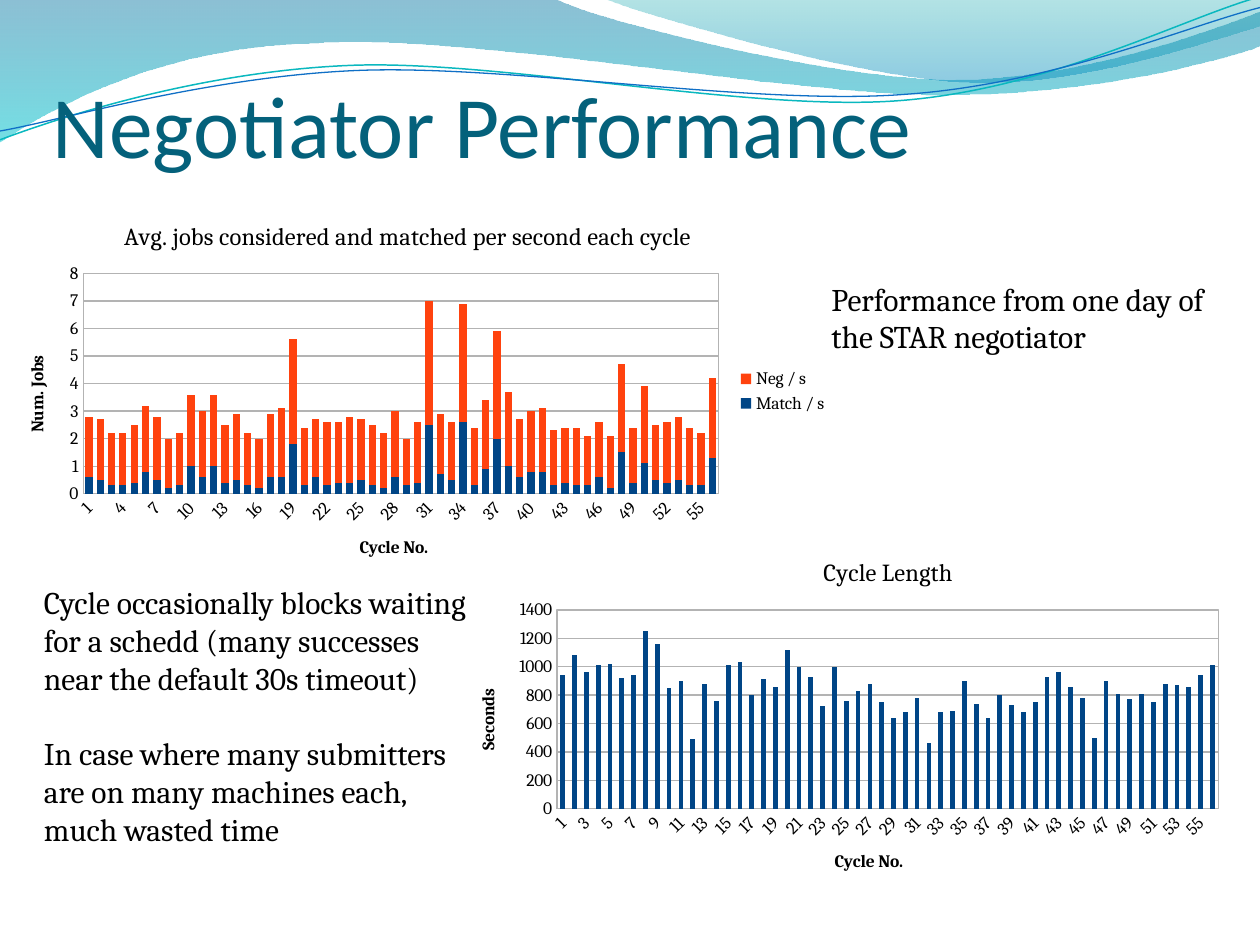
from dataclasses import dataclass
from typing import Optional

import lxml.etree
import pptx
import pptx.chart.data
import pptx.dml.color
import pptx.enum.chart
import pptx.enum.text
import pptx.oxml
import pptx.oxml.ns
import pptx.util

Inches, Pt = pptx.util.Inches, pptx.util.Pt
RGB = pptx.dml.color.RGBColor
qn = pptx.oxml.ns.qn
XL = pptx.enum.chart.XL_CHART_TYPE

BLACK = RGB(0x00, 0x00, 0x00)
TITLE_TEAL = RGB(0x04, 0x61, 0x7B)
GRID_GRAY = RGB(0xB3, 0xB3, 0xB3)
NAVY = RGB(0x00, 0x45, 0x86)
ORANGE = RGB(0xFF, 0x42, 0x0E)
DEEP_BLUE = RGB(0x00, 0x74, 0xA1)
CYAN = RGB(0x00, 0xC6, 0xCF)
TEAL = RGB(0x00, 0xA1, 0xA9)
SKY_BLUE = RGB(0x00, 0x8B, 0xBF)
LINE_TEAL = RGB(0x0A, 0xB8, 0xBF)
LINE_BLUE = RGB(0x0F, 0x6F, 0xC6)


@dataclass
class Wave:
    start: tuple
    segments: list
    gradient: Optional[list] = None
    line: Optional[tuple] = None


@dataclass
class Series:
    name: str
    values: list
    color: RGB


@dataclass
class ChartSpec:
    kind: XL
    box: tuple
    plot: tuple
    title: str
    title_at: tuple
    value_title: str
    maximum: int
    unit: int
    label_step: int
    gap: int
    overlap: int
    legend: bool
    series: list


@dataclass
class Note:
    box: tuple
    text: str


WAVES = [
    Wave((0, 0), [(4.4, -0.01), (4.76, 0.17, 6.64, 0.63, 7.58, 0.63),
                  (8.53, 0.63, 9.58, 0.26, 10, 0.09), (10.01, 0.36),
                  (9.83, 0.44, 8.7, 0.76, 7.46, 0.75), (6.22, 0.75, 3.82, 0.28, 2.57, 0.34),
                  (1.29, 0.36, 0.46, 0.83, -0.01, 1.13), (0, 0)],
         gradient=[(DEEP_BLUE, 45), (CYAN, 55)]),
    Wave((4.79, -0.01), [(5.09, 0.11, 6.82, 0.62, 7.69, 0.65),
                         (8.56, 0.69, 9.61, 0.32, 10, 0.21), (10, 0), (4.79, -0.01)],
         gradient=[(TEAL, 30), (SKY_BLUE, 45)]),
    Wave((0, 1.11), [(0.48, 0.93, 1.58, 0.57, 2.77, 0.52), (3.95, 0.47, 5.93, 0.89, 7.13, 0.8),
                     (8.33, 0.71, 9.38, 0.15, 9.98, -0.02)], line=(LINE_TEAL, 0.85)),
    Wave((0, 1.04), [(0.47, 0.96, 1.64, 0.61, 2.83, 0.56), (4.03, 0.51, 5.97, 0.84, 7.17, 0.75),
                     (8.36, 0.67, 9.41, 0.21, 10, 0.06)], line=(LINE_BLUE, 0.75)),
]

MATCHED = [0.6, 0.5, 0.3, 0.3, 0.4, 0.8, 0.5, 0.2, 0.3, 1, 0.6, 1, 0.4, 0.5, 0.3, 0.2, 0.6, 0.6, 1.8,
           0.3, 0.6, 0.3, 0.4, 0.4, 0.5, 0.3, 0.2, 0.6, 0.3, 0.4, 2.5, 0.7, 0.5, 2.6, 0.3, 0.9, 2, 1,
           0.6, 0.8, 0.8, 0.3, 0.4, 0.3, 0.3, 0.6, 0.2, 1.5, 0.4, 1.1, 0.5, 0.4, 0.5, 0.3, 0.3, 1.3]
NEGOTIATED = [2.2, 2.2, 1.9, 1.9, 2.1, 2.4, 2.3, 1.8, 1.9, 2.6, 2.4, 2.6, 2.1, 2.4, 1.9, 1.8, 2.3, 2.5,
              3.8, 2.1, 2.1, 2.3, 2.2, 2.4, 2.2, 2.2, 2, 2.4, 1.7, 2.2, 4.5, 2.2, 2.1, 4.3, 2.1, 2.5,
              3.9, 2.7, 2.1, 2.2, 2.3, 2, 2, 2.1, 1.8, 2, 1.9, 3.2, 2, 2.8, 2, 2.2, 2.3, 2.1, 1.9, 2.9]
LENGTHS = [940, 1080, 960, 1010, 1020, 920, 940, 1250, 1160, 850, 900, 490, 880, 760, 1010, 1030, 800,
           910, 860, 1120, 1000, 930, 720, 1000, 760, 830, 880, 750, 640, 680, 780, 460, 680, 690, 900,
           740, 640, 800, 730, 680, 750, 930, 960, 860, 780, 500, 900, 810, 770, 810, 750, 880, 870,
           860, 940, 1010]

CHARTS = [
    ChartSpec(XL.COLUMN_STACKED, (0, 1.58, 6.67, 3.05), (0.66, 2.17, 5.04, 1.75),
              "Avg. jobs considered and matched per second each cycle", (0.95, 1.71),
              "Num. Jobs", 8, 1, 3, 55, 100, True,
              [Series("Match / s", MATCHED, NAVY), Series("Neg / s", NEGOTIATED, ORANGE)]),
    ChartSpec(XL.COLUMN_CLUSTERED, (3.58, 4.25, 6.21, 2.88), (4.42, 4.84, 5.25, 1.58),
              "Cycle Length", (6.5, 4.38), "Seconds", 1400, 200, 2, 150, 0, False,
              [Series("Series 1", LENGTHS, NAVY)]),
]

NOTES = [
    Note((6.5, 2.17, 3.25, 0.71), "Performance from one day of the STAR negotiator"),
    Note((0.25, 4.58, 3.58, 2.22),
         "Cycle occasionally blocks waiting for a schedd (many successes near the default 30s timeout)\n"
         "In case where many submitters are on many machines each, much wasted time"),
]


def write(tf, text: str, size: float = 18, font: str = "Cambria", color: RGB = BLACK,
          bold: bool = False, align=None, gap: float = 0) -> None:
    for i, line in enumerate(text.split("\n")):
        p = tf.add_paragraph() if i else tf.paragraphs[0]
        p.alignment = align
        if i:
            p.space_before = Pt(gap)
        r = p.add_run()
        r.text = line
        r.font.size, r.font.name, r.font.bold = Pt(size), font, bold
        r.font.color.rgb = color


def draw_wave(s, wave: Wave) -> None:
    points = [(Inches(seg[i]), Inches(seg[i + 1]))
              for seg in [wave.start, *wave.segments] for i in range(0, len(seg), 2)]
    builder = s.shapes.build_freeform(*points[0])
    builder.add_line_segments(points[1:], close=wave.gradient is not None)
    sp = builder.convert_to_shape()
    steps = iter(sp.element.findall(".//" + qn("a:lnTo")))
    for seg in wave.segments:
        first = next(steps)
        if len(seg) == 6:
            curve = lxml.etree.Element(qn("a:cubicBezTo"))
            first.addprevious(curve)
            for step in (first, next(steps), next(steps)):
                curve.append(step[0])
                step.getparent().remove(step)
    sp.shadow.inherit = False
    if wave.gradient:
        sp.line.fill.background()
        sp.fill.gradient()
        sp.fill.gradient_angle = 270
        for stop, (color, _) in zip(sp.fill.gradient_stops, wave.gradient):
            stop.color.rgb = color
        colors = sp.element.spPr.findall(".//" + qn("a:gs") + "/" + qn("a:srgbClr"))
        for node, (_, opacity) in zip(colors, wave.gradient):
            lxml.etree.SubElement(node, qn("a:alpha"), val=str(opacity * 1000))
    else:
        sp.fill.background()
        sp.line.color.rgb, sp.line.width = wave.line[0], Pt(wave.line[1])


def place(parent, index: int, box: tuple, frame: tuple, target: str = "") -> None:
    for old in parent.findall(qn("c:layout")):
        parent.remove(old)
    left, top, width, height = frame
    ratios = [(box[0] - left) / width, (box[1] - top) / height]
    ratios += [v / total for v, total in zip(box[2:], (width, height))]
    modes = "".join(f'<c:{k} val="edge"/>' for k in ("xMode", "yMode"))
    sizes = "".join(f'<c:{k} val="{v:.4f}"/>' for k, v in zip("xywh", ratios))
    parent.insert(index, pptx.oxml.parse_xml(
        f'<c:layout {pptx.oxml.ns.nsdecls("c")}><c:manualLayout>{target}{modes}{sizes}'
        '</c:manualLayout></c:layout>'))


def format_layout(chart, spec: ChartSpec) -> None:
    area = chart.element.find(".//" + qn("c:plotArea"))
    place(area, 0, spec.plot, spec.box, '<c:layoutTarget val="inner"/>')
    place(chart.element.find(qn("c:chart") + "/" + qn("c:title")), 1, spec.title_at, spec.box)
    area.append(pptx.oxml.parse_xml(
        f'<c:spPr {pptx.oxml.ns.nsdecls("c", "a")}><a:noFill/><a:ln w="9525"><a:solidFill>'
        f'<a:srgbClr val="{GRID_GRAY}"/></a:solidFill></a:ln></c:spPr>'))
    axis = area.find(qn("c:catAx"))
    axis.find(qn("c:txPr") + "/" + qn("a:bodyPr")).set("rot", "-2700000")
    skip = lxml.etree.Element(qn("c:tickLblSkip"), val=str(spec.label_step))
    axis.find(qn("c:noMultiLvlLbl")).addprevious(skip)


def draw_chart(s, spec: ChartSpec) -> None:
    data = pptx.chart.data.CategoryChartData()
    data.categories = [str(n) for n in range(1, len(spec.series[0].values) + 1)]
    for series in spec.series:
        data.add_series(series.name, series.values)
    chart = s.shapes.add_chart(spec.kind, *map(Inches, spec.box), data).chart
    chart.font.size, chart.font.name = Pt(10), "Cambria"
    chart.font.color.rgb = BLACK
    write(chart.chart_title.text_frame, spec.title, size=14)
    chart.has_legend = spec.legend
    if spec.legend:
        chart.legend.position = pptx.enum.chart.XL_LEGEND_POSITION.RIGHT
        chart.legend.include_in_layout = False
        chart.legend.font.size = Pt(10)
    for axis, title in ((chart.category_axis, "Cycle No."), (chart.value_axis, spec.value_title)):
        write(axis.axis_title.text_frame, title, size=10, bold=True)
        axis.major_tick_mark = axis.minor_tick_mark = pptx.enum.chart.XL_TICK_MARK.NONE
        axis.tick_labels.font.size = Pt(10)
        axis.format.line.color.rgb, axis.format.line.width = GRID_GRAY, Pt(0.75)
    axis = chart.value_axis
    axis.minimum_scale, axis.maximum_scale, axis.major_unit = 0, spec.maximum, spec.unit
    grid = axis.major_gridlines.format.line
    grid.color.rgb, grid.width = GRID_GRAY, Pt(0.75)
    plot = chart.plots[0]
    plot.gap_width, plot.overlap, plot.vary_by_categories = spec.gap, spec.overlap, False
    for drawn, series in zip(plot.series, spec.series):
        drawn.format.fill.solid()
        drawn.format.fill.fore_color.rgb = series.color
    format_layout(chart, spec)


def draw_title(s, text: str) -> None:
    sp = s.shapes.title
    sp.element.getparent().append(sp.element)
    sp.left, sp.top, sp.width, sp.height = map(Inches, (0.42, 0.33, 9.08, 1.25))
    tf = sp.text_frame
    tf.margin_left = tf.margin_right = tf.margin_bottom = 0
    tf.margin_top = Inches(0.05)
    tf.vertical_anchor = pptx.enum.text.MSO_ANCHOR.MIDDLE
    write(tf, text, size=50, font="Calibri", color=TITLE_TEAL, align=pptx.enum.text.PP_ALIGN.LEFT)


def draw_note(s, note: Note) -> None:
    tf = s.shapes.add_textbox(*map(Inches, note.box)).text_frame
    tf.word_wrap = True
    tf.auto_size = pptx.enum.text.MSO_AUTO_SIZE.SHAPE_TO_FIT_TEXT
    write(tf, note.text, gap=21.5)


def main() -> None:
    prs = pptx.Presentation()
    prs.slide_width, prs.slide_height = Inches(10), Inches(7.5)
    s = prs.slides.add_slide(prs.slide_layouts[5])
    for wave in WAVES:
        draw_wave(s, wave)
    draw_title(s, "Negotiator Performance")
    for spec in CHARTS:
        draw_chart(s, spec)
    for note in NOTES:
        draw_note(s, note)
    prs.save("out.pptx")


if __name__ == "__main__":
    main()
